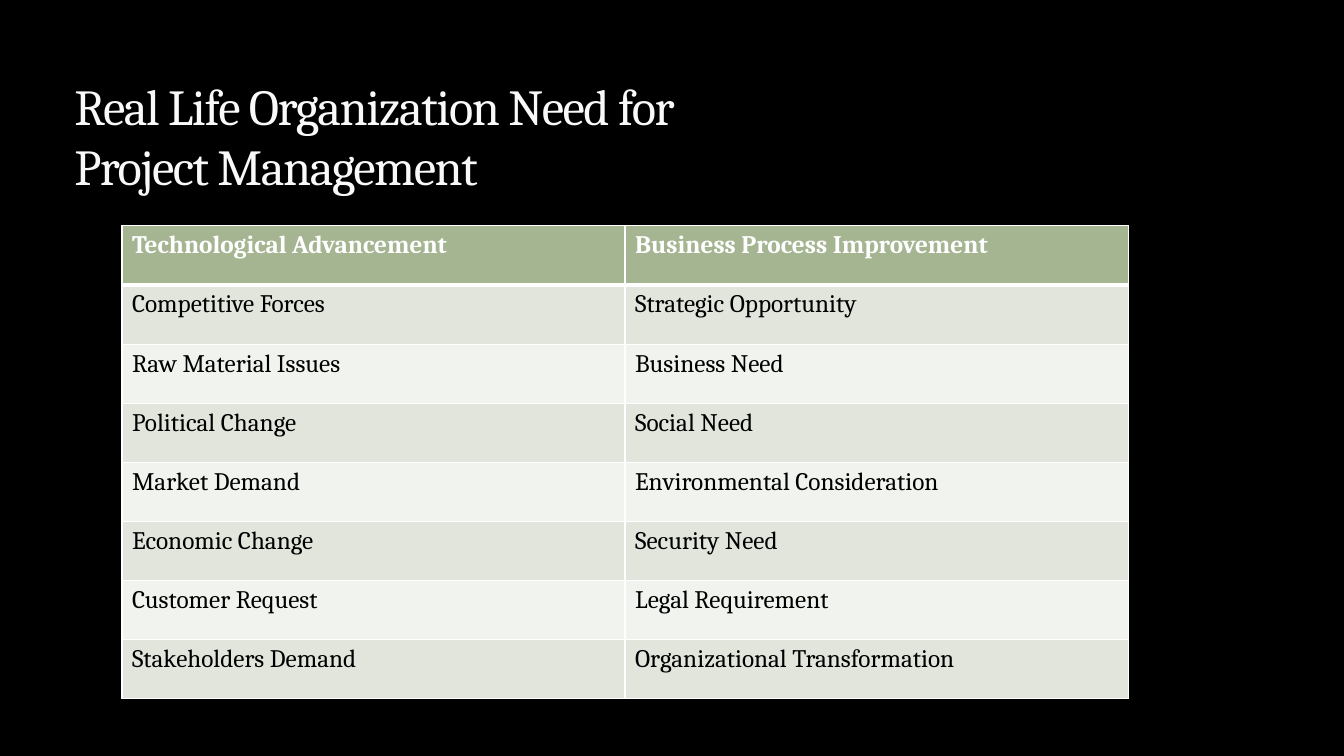
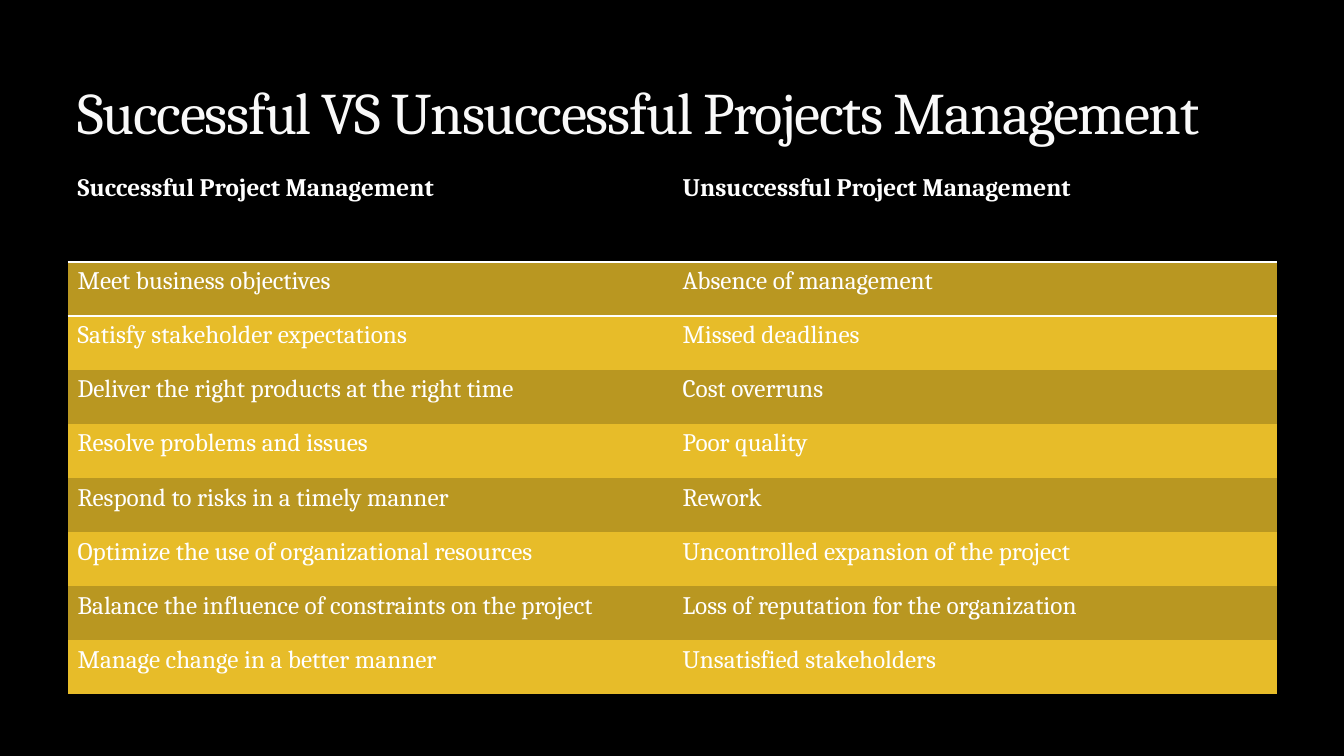
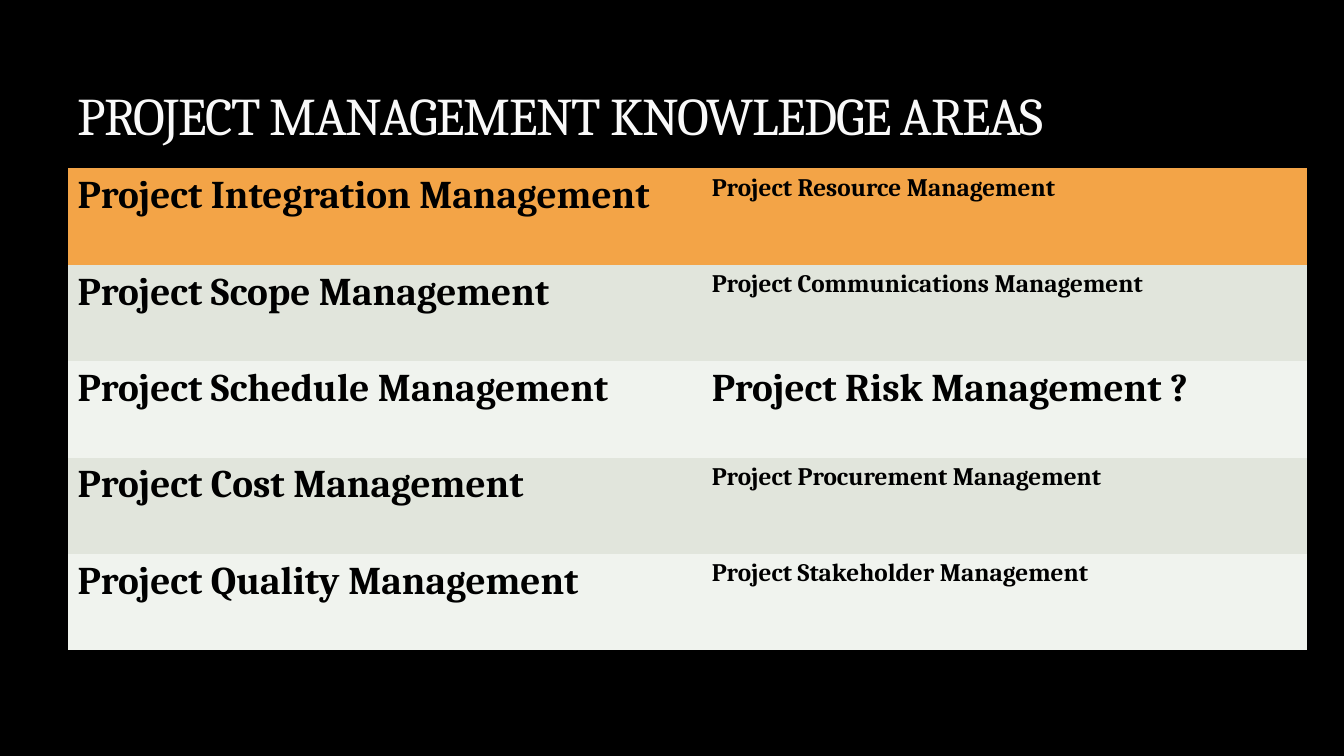
from dataclasses import dataclass

from lxml import etree
from pptx import Presentation
from pptx.dml.color import RGBColor
from pptx.enum.text import MSO_ANCHOR
from pptx.oxml.ns import qn
from pptx.util import Inches, Pt

BOTTOM = MSO_ANCHOR.BOTTOM
NO_GRID_STYLE = "{2D5ABB26-0587-4C30-8999-92F81FD0307C}"


@dataclass(frozen=True)
class Theme:
    font: str = "Cambria"
    black: str = "000000"
    white: str = "FFFFFF"
    title: str = "F9F9F9"
    title_outline: str = "3C4422"
    sage: str = "A5B592"
    orange: str = "F3A447"
    pale_bands: tuple = ("E1E5DC", "F0F3EE")
    gold_bands: tuple = ("B99721", "E7BC29")
    body_size: float = 18
    large_size: float = 28


theme = Theme()


def add_span(para, text, size, color, bold=False):
    span = para.add_run()
    span.text = text
    span.font.name = theme.font
    span.font.size = Pt(size)
    span.font.bold = bold
    span.font.color.rgb = RGBColor.from_string(color)
    return span


def add_line(parent, tag, color, width, position, alpha=100):
    line = etree.Element(qn(tag), w=str(Pt(width)))
    fill = etree.SubElement(line, qn("a:solidFill"))
    tint = etree.SubElement(fill, qn("a:srgbClr"), val=color)
    if alpha < 100:
        etree.SubElement(tint, qn("a:alpha"), val=str(alpha * 1000))
    parent.insert(position, line)


pages = [
    {
        "title": ["Real Life Organization Need for ", "Project Management"],
        "title_size": 36,
        "title_at": (0.64, 0.66),
        "table_at": (1.21, 2.24),
        "columns": (4.99, 4.99),
        "header_height": 0.59,
        "height": 4.69,
        "header_fill": theme.sage,
        "header_color": theme.white,
        "bands": theme.pale_bands,
        "body_color": theme.black,
        "bold_body": False,
        "grid": 1,
        "header_rule": 3,
        "large": (),
        "rows": [
            ("Technological Advancement", "Business Process Improvement"),
            ("Competitive Forces", "Strategic Opportunity"),
            ("Raw Material Issues", "Business Need"),
            ("Political Change", "Social Need"),
            ("Market Demand", "Environmental Consideration"),
            ("Economic Change", "Security Need"),
            ("Customer Request", "Legal Requirement"),
            ("Stakeholders Demand", "Organizational Transformation"),
        ],
    },
    {
        "title": ["Successful VS Unsuccessful Projects Management"],
        "title_size": 42,
        "title_at": (0.67, 0.17),
        "table_at": (0.67, 1.67),
        "columns": (6, 6),
        "header_height": 0.93,
        "height": 5.22,
        "header_fill": theme.black,
        "header_color": theme.white,
        "bands": theme.gold_bands,
        "body_color": theme.white,
        "bold_body": False,
        "grid": 0,
        "header_rule": 2,
        "large": (),
        "rows": [
            ("Successful Project Management", "Unsuccessful Project Management"),
            ("Meet business objectives", "Absence of management"),
            ("Satisfy stakeholder expectations", "Missed deadlines"),
            ("Deliver the right products at the right time", "Cost overruns"),
            ("Resolve problems and issues", "Poor quality"),
            ("Respond to risks in a timely manner", "Rework"),
            ("Optimize the use of organizational resources", "Uncontrolled expansion of the project"),
            ("Balance the influence of constraints on the project", "Loss of reputation for the organization"),
            ("Manage change in a better manner", "Unsatisfied stakeholders"),
        ],
    },
    {
        "title": ["PROJECT MANAGEMENT KNOWLEDGE AREAS"],
        "title_size": 37.8,
        "title_at": (0.67, 0.17),
        "table_at": (0.67, 1.67),
        "columns": (6.29, 6),
        "header_height": 0.96,
        "height": 4.78,
        "header_fill": theme.orange,
        "header_color": theme.black,
        "bands": theme.pale_bands,
        "body_color": theme.black,
        "bold_body": True,
        "grid": 0,
        "header_rule": 0,
        "large": ((0, 0), (1, 0), (2, 0), (3, 0), (4, 0), (2, 1)),
        "rows": [
            ("Project Integration Management", "Project Resource Management"),
            ("Project Scope Management", "Project Communications Management"),
            ("Project Schedule Management", "Project Risk Management ?"),
            ("Project Cost Management", "Project Procurement Management"),
            ("Project Quality Management", "Project Stakeholder Management"),
        ],
    },
]

deck = Presentation()
deck.slide_width = Inches(13.33)
deck.slide_height = Inches(7.5)

for content in pages:
    page = deck.slides.add_slide(deck.slide_layouts[6])
    page.background.fill.solid()
    page.background.fill.fore_color.rgb = RGBColor.from_string(theme.black)

    rows = content["rows"]
    left, top = content["table_at"]
    frame = page.shapes.add_table(
        len(rows), 2, Inches(left), Inches(top),
        Inches(sum(content["columns"])), Inches(content["height"]),
    )
    table = frame.table
    table.first_row = False
    table.horz_banding = False
    table._tbl.tblPr.find(qn("a:tableStyleId")).text = NO_GRID_STYLE
    for column, width in zip(table.columns, content["columns"]):
        column.width = Inches(width)
    row_height = (content["height"] - content["header_height"]) / (len(rows) - 1)

    for row_index, labels in enumerate(rows):
        is_header = row_index == 0
        table.rows[row_index].height = Inches(content["header_height"] if is_header else row_height)
        fill = content["header_fill"] if is_header else content["bands"][(row_index - 1) % 2]
        color = content["header_color"] if is_header else content["body_color"]
        widths = dict.fromkeys(("a:lnL", "a:lnR", "a:lnT", "a:lnB"), content["grid"])
        if row_index == 0:
            widths["a:lnB"] = content["header_rule"]
        elif row_index == 1:
            widths["a:lnT"] = content["header_rule"]

        for column_index, label in enumerate(labels):
            cell = table.cell(row_index, column_index)
            cell.fill.solid()
            cell.fill.fore_color.rgb = RGBColor.from_string(fill)
            is_large = (row_index, column_index) in content["large"]
            size = theme.large_size if is_large else theme.body_size
            add_span(cell.text_frame.paragraphs[0], label, size, color, is_header or content["bold_body"])
            drawn = [(tag, width) for tag, width in widths.items() if width]
            for position, (tag, width) in enumerate(drawn):
                add_line(cell._tc.get_or_add_tcPr(), tag, theme.white, width, position)

    left, top = content["title_at"]
    box = page.shapes.add_textbox(Inches(left), Inches(top), Inches(12), Inches(1.33))
    box.text_frame.word_wrap = True
    box.text_frame.vertical_anchor = BOTTOM
    para = box.text_frame.paragraphs[0]
    for line_index, text in enumerate(content["title"]):
        if line_index:
            para.add_line_break()
        span = add_span(para, text, content["title_size"], theme.title)
        properties = span.font._element
        properties.set("spc", "-100")
        add_line(properties, "a:ln", theme.title_outline, 0.25, 0, alpha=25)

deck.save("out.pptx")
